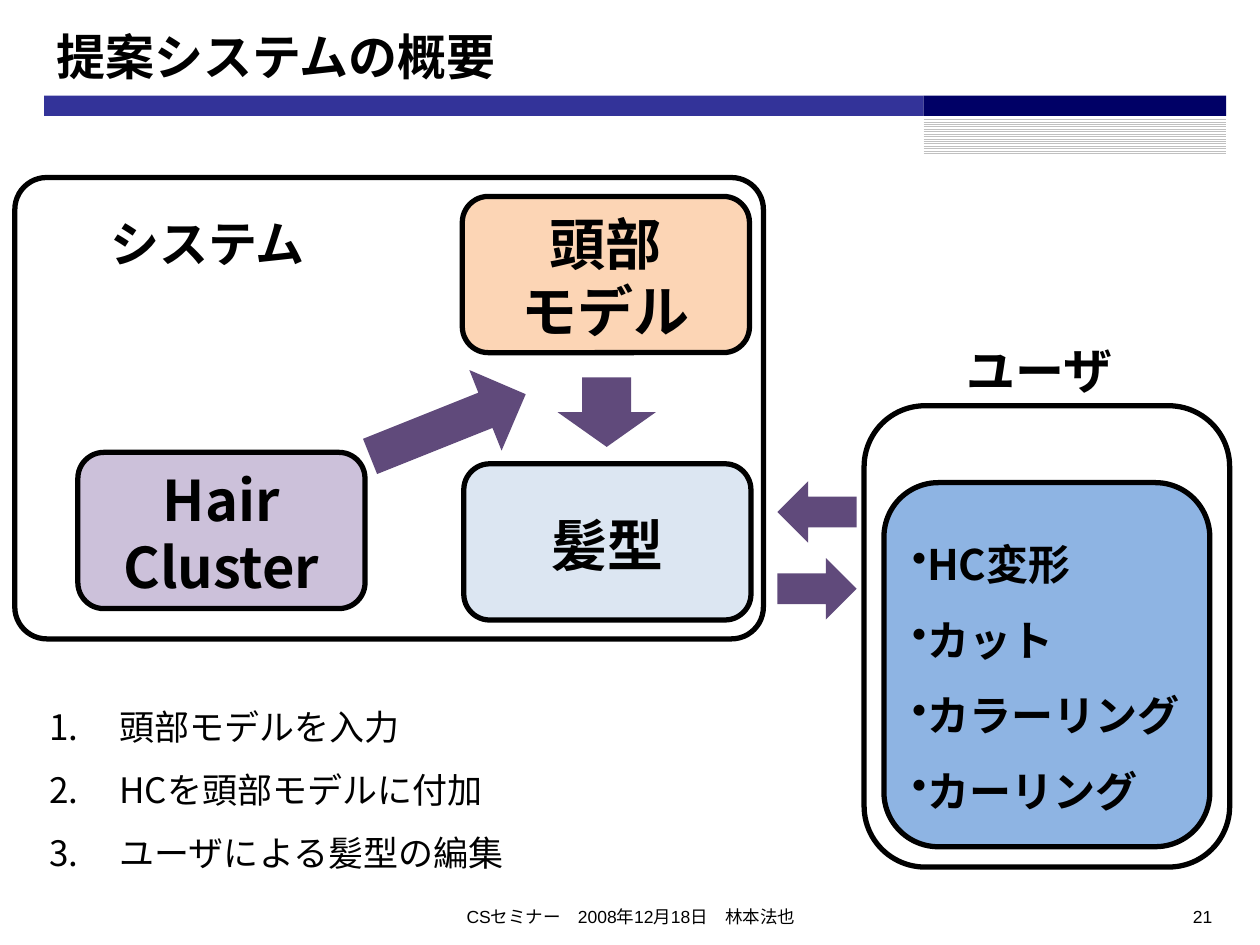
from dataclasses import dataclass

from lxml.etree import SubElement
from pptx import Presentation
from pptx.dml.color import RGBColor
from pptx.enum.dml import MSO_PATTERN
from pptx.enum.shapes import MSO_SHAPE
from pptx.enum.text import MSO_ANCHOR, PP_ALIGN
from pptx.oxml.ns import qn
from pptx.util import Cm, Pt


@dataclass(frozen=True)
class Theme:
    ink: str = "000000"
    paper: str = "FFFFFF"
    bar: str = "333399"
    bar_end: str = "000066"
    hatch: str = "C0C0C0"
    arrow: str = "604A7B"
    head: str = "FCD5B5"
    cluster: str = "CCC1DA"
    hairstyle: str = "DCE6F2"
    editing: str = "8EB4E3"
    latin: str = "Arial"
    japanese: str = "Noto Sans CJK JP"
    node_size: int = 32
    heading_size: int = 28
    edit_size: int = 24
    step_size: int = 20
    footer_size: int = 10
    outline: int = 3


THEME = Theme()


def color(value):
    return RGBColor.from_string(value)


def write(shape, text, size, font=THEME.japanese, bold=False, align=PP_ALIGN.LEFT,
          anchor=MSO_ANCHOR.TOP, wrap=True, spacing=None, bullet=None, indent=0):
    """Write one paragraph per line; bullet is a (tag, attributes) pair."""
    frame = shape.text_frame
    frame.word_wrap = wrap
    frame.vertical_anchor = anchor
    for number, line in enumerate(text.split("\n")):
        paragraph = frame.add_paragraph() if number else frame.paragraphs[0]
        paragraph.alignment = align
        if spacing:
            paragraph.line_spacing = spacing
        if bullet:
            properties = paragraph._p.get_or_add_pPr()
            properties.set("marL", str(Cm(indent)))
            properties.set("indent", str(-Cm(indent)))
            tag, attributes = bullet
            SubElement(properties, qn(tag), attributes)
        run = paragraph.add_run()
        run.text = line
        run.font.size = Pt(size)
        run.font.bold = bold
        run.font.name = font
        run.font.color.rgb = color(THEME.ink)
        SubElement(run._r.get_or_add_rPr(), qn("a:ea"), typeface=THEME.japanese)


def add_text(slide, left, top, width, height, text, size, **style):
    box = slide.shapes.add_textbox(Cm(left), Cm(top), Cm(width), Cm(height))
    write(box, text, size, **style)


def add_block(slide, kind, left, top, width, height, fill=None, outlined=False):
    block = slide.shapes.add_shape(kind, Cm(left), Cm(top), Cm(width), Cm(height))
    block.shadow.inherit = False
    if fill:
        block.fill.solid()
        block.fill.fore_color.rgb = color(fill)
    else:
        block.fill.background()
    if outlined:
        block.line.color.rgb = color(THEME.ink)
        block.line.width = Pt(THEME.outline)
    else:
        block.line.fill.background()
    return block


def add_panel(slide, left, top, width, height, fill=None):
    return add_block(slide, MSO_SHAPE.ROUNDED_RECTANGLE, left, top, width, height,
                     fill, outlined=True)


def add_arrow(slide, left, top, width, height, rotation=0):
    arrow = add_block(slide, MSO_SHAPE.RIGHT_ARROW, left, top, width, height, THEME.arrow)
    arrow.rotation = rotation
    return arrow


def add_header(slide, left, top, width, title):
    title_height, bar_height, end_width = 1.6, 0.41, 6.1
    bar_top = top + title_height
    end_left = left + width - end_width
    add_block(slide, MSO_SHAPE.RECTANGLE, left, bar_top, width - end_width,
              bar_height, THEME.bar)
    hatch = add_block(slide, MSO_SHAPE.RECTANGLE, end_left, bar_top + 0.43, end_width, 0.76)
    hatch.fill.patterned()
    hatch.fill.pattern = MSO_PATTERN.LIGHT_HORIZONTAL
    hatch.fill.fore_color.rgb = color(THEME.hatch)
    hatch.fill.back_color.rgb = color(THEME.paper)
    add_block(slide, MSO_SHAPE.RECTANGLE, end_left, bar_top, end_width,
              bar_height, THEME.bar_end)
    add_text(slide, left, top, width, title_height, title, THEME.heading_size,
             font=THEME.latin, bold=True, anchor=MSO_ANCHOR.MIDDLE)


def add_footer(slide, top, text, page):
    for left, width, content, align in ((8.69, 8.05, text, PP_ALIGN.CENTER),
                                        (18.77, 5.92, page, PP_ALIGN.RIGHT)):
        add_text(slide, left, top, width, 0.74, content, THEME.footer_size,
                 font=THEME.latin, align=align)


def add_system(slide, left, top, width, height):
    panel = add_panel(slide, left, top, width, height)
    panel.adjustments[0] = 0.069
    add_text(slide, left + 1.68, top + 0.59, 4.5, 1.45, "システム",
             THEME.heading_size, bold=True, wrap=False)
    for x, y, text, fill in ((9.05, 5.77, "髪型", THEME.hairstyle),
                             (9.02, 0.38, "頭部\nモデル", THEME.head),
                             (1.27, 5.54, "Hair Cluster", THEME.cluster)):
        node = add_panel(slide, left + x, top + y, 5.79, 3.15, fill)
        node.text_frame.margin_top = Cm(0.2)
        write(node, text, THEME.node_size, bold=True, align=PP_ALIGN.CENTER,
              anchor=MSO_ANCHOR.MIDDLE)
    attach = add_arrow(slide, left + 7.04, top + 4.12, 3.38, 1.75, rotation=338.2)
    attach.adjustments[0] = 0.437
    add_arrow(slide, left + 11.23, top + 3.74, 1.4, 1.98, rotation=90)


def add_user(slide, left, top, width, height):
    add_panel(slide, left, top, width, height)
    add_text(slide, left + 1.81, top - 1.45, 3.53, 1.3, "ユーザ",
             THEME.heading_size, bold=True, wrap=False)
    editing = add_panel(slide, left + 0.4, top + 1.55, width - 0.8, height - 1.96,
                        THEME.editing)
    write(editing, "HC変形\nカット\nカラーリング\nカーリング", THEME.edit_size, bold=True,
          anchor=MSO_ANCHOR.MIDDLE, spacing=1.5, bullet=("a:buChar", {"char": "•"}))


def add_exchange(slide, left, top):
    """Arrows between the user and the system, one each way."""
    for row, rotation in enumerate((180, 0)):
        add_arrow(slide, left, top + row * 1.55, 1.6, 1.24, rotation)


def add_steps(slide, left, top, width, height):
    add_text(slide, left, top, width, height,
             "頭部モデルを入力\nHCを頭部モデルに付加\nユーザによる髪型の編集",
             THEME.step_size, spacing=1.5, indent=1.42,
             bullet=("a:buAutoNum", {"type": "arabicPeriod"}))


def main():
    deck = Presentation()
    deck.slide_width, deck.slide_height = Cm(25.4), Cm(19.05)
    slide = deck.slides.add_slide(deck.slide_layouts[6])
    add_header(slide, 0.89, 0.33, 23.83, "提案システムの概要")
    add_footer(slide, 18.14, "CSセミナー　2008年12月18日　林本法也", "21")
    add_user(slide, 17.42, 8.18, 7.37, 9.3)
    add_system(slide, 0.3, 3.58, 15.09, 9.3)
    add_exchange(slide, 15.67, 9.7)
    add_steps(slide, 0.74, 13.67, 13.16, 3.99)
    deck.save("out.pptx")


if __name__ == "__main__":
    main()
